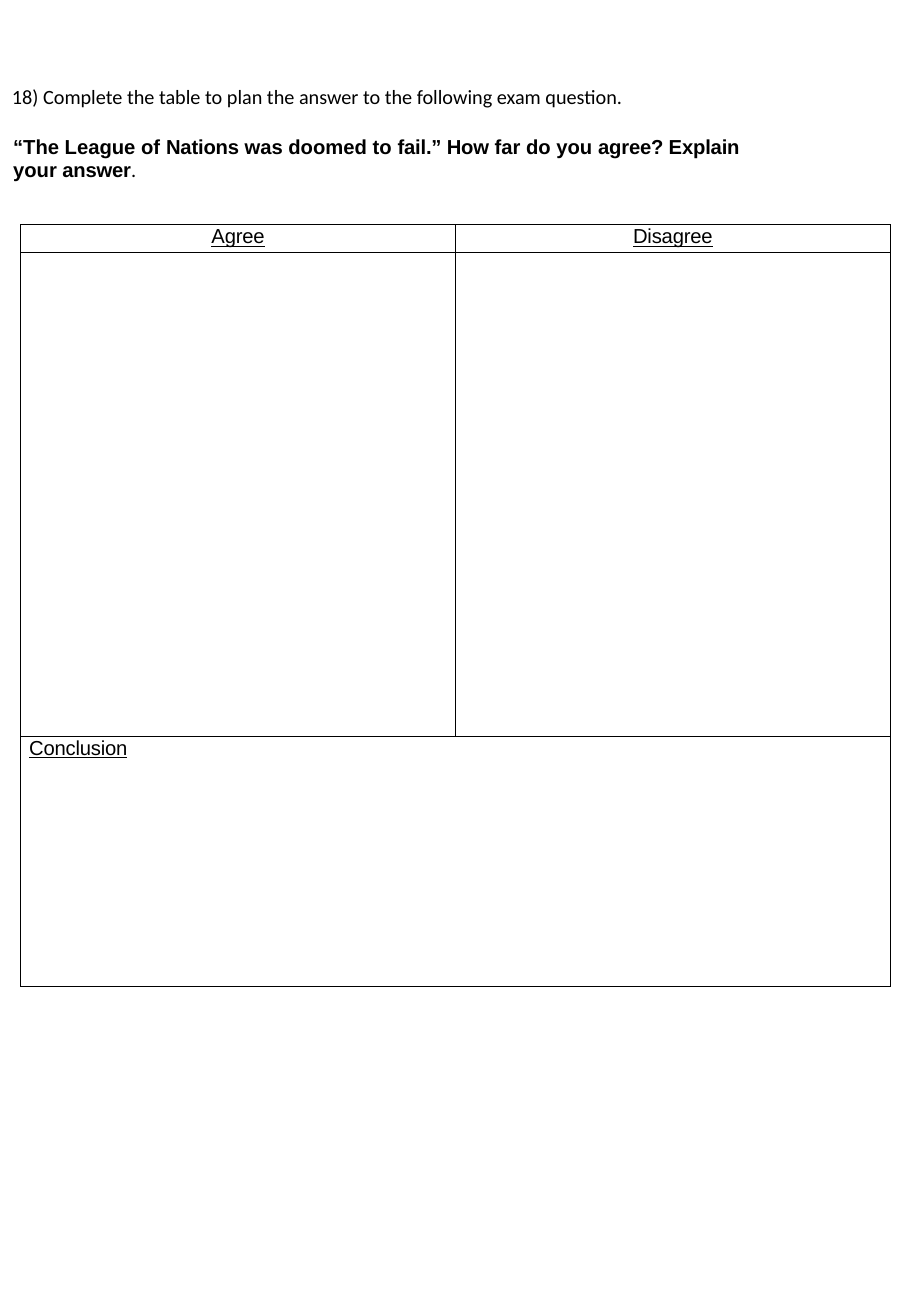
import pptx
import pptx.dml.color
import pptx.enum.text
import pptx.oxml
import pptx.oxml.ns
import pptx.util

INK = pptx.dml.color.RGBColor(0x00, 0x00, 0x00)
CENTER = pptx.enum.text.PP_ALIGN.CENTER
LEFT = pptx.enum.text.PP_ALIGN.LEFT


class Worksheet:
    """A page laid out on a grid of 75 columns, with rows as tall as columns are wide."""

    COLUMNS = 75
    SIZE = 12
    BODY, STRONG = "Calibri", "Arial"
    TIGHT = -0.1
    RULE = 0.5

    def __init__(self, width, height):
        self.deck = pptx.Presentation()
        self.deck.slide_width = pptx.util.Inches(width)
        self.deck.slide_height = pptx.util.Inches(height)
        self.unit = self.deck.slide_width / self.COLUMNS
        self.slide = self.deck.slides.add_slide(self.deck.slide_layouts[6])

    def grid(self, *lengths):
        return [pptx.util.Emu(round(length * self.unit)) for length in lengths]

    def add_words(self, paragraph, words, font=BODY, bold=False, underline=False, tracking=0):
        run = paragraph.add_run()
        run.text = words
        run.font.name = font
        run.font.size = pptx.util.Pt(self.SIZE)
        run.font.bold = bold
        run.font.underline = underline
        run.font.color.rgb = INK
        if tracking:
            run._r.get_or_add_rPr().set("spc", str(round(tracking * 100)))

    def text_box(self, column, row, columns, rows):
        frame = self.slide.shapes.add_textbox(*self.grid(column, row, columns, rows)).text_frame
        frame.word_wrap = True
        return frame

    def question_line(self, frame, pieces, before=0):
        """Adds a bold line from (words, tracking) pieces and returns its paragraph."""
        line = frame.add_paragraph()
        indent, = self.grid(0.1)
        line._p.get_or_add_pPr().set("marL", str(indent))
        line.line_spacing = pptx.util.Pt(14.1)
        line.space_before = pptx.util.Pt(before)
        for words, tracking in pieces:
            self.add_words(line, words, self.STRONG, bold=True, tracking=tracking)
        return line

    def table(self, column, row, widths, heights):
        plan = self.slide.shapes.add_table(
            len(heights), len(widths),
            *self.grid(column, row, sum(widths), sum(heights))).table
        plan.first_row = plan.horz_banding = False
        for part, width in zip(plan.columns, self.grid(*widths)):
            part.width = width
        for part, height in zip(plan.rows, self.grid(*heights)):
            part.height = height
        for cell in plan.iter_cells():
            cell.margin_left = cell.margin_right = cell.margin_top = cell.margin_bottom = 0
            cell.fill.background()
            self.border(cell)
        return plan

    def border(self, cell):
        properties = cell._tc.get_or_add_tcPr()
        for position, side in enumerate(("lnL", "lnR", "lnT", "lnB")):
            properties.insert(position, pptx.oxml.parse_xml(
                f'<a:{side} {pptx.oxml.ns.nsdecls("a")} w="{pptx.util.Pt(self.RULE)}">'
                f'<a:solidFill><a:srgbClr val="{INK}"/></a:solidFill></a:{side}>'))

    def heading(self, cell, words, align=LEFT, spacing=13.8, indent=0):
        cell.margin_left, = self.grid(indent)
        paragraph = cell.text_frame.paragraphs[0]
        paragraph.alignment = align
        paragraph.line_spacing = pptx.util.Pt(spacing)
        self.add_words(paragraph, words, self.STRONG, underline=True, tracking=self.TIGHT)


def main():
    sheet = Worksheet(7.5, 10.83)
    tight = sheet.TIGHT

    task = sheet.text_box(0, 6.4, 75, 13.2)
    sheet.add_words(task.paragraphs[0],
                    "18) Complete the table to plan the answer to the following exam question.")
    sheet.question_line(task, [
        ("“The League of ", 0), ("Nations ", tight), ("was doomed to ", 0),
        ("fail.” How ", tight), ("far do you ", 0), ("agree? Explain", tight)], before=15.6)
    ending = sheet.question_line(task, [("your", 0), (" answer", tight)])
    sheet.add_words(ending, ".")

    plan = sheet.table(1.7, 18.5, [35.8, 35.8], [2.3, 39.8, 20.6])
    for column, side in enumerate(("Agree", "Disagree")):
        sheet.heading(plan.cell(0, column), side, CENTER)
    conclusion = plan.cell(2, 0)
    conclusion.merge(plan.cell(2, 1))
    sheet.heading(conclusion, "Conclusion", spacing=13.7, indent=0.7)

    sheet.deck.save("out.pptx")


if __name__ == "__main__":
    main()
